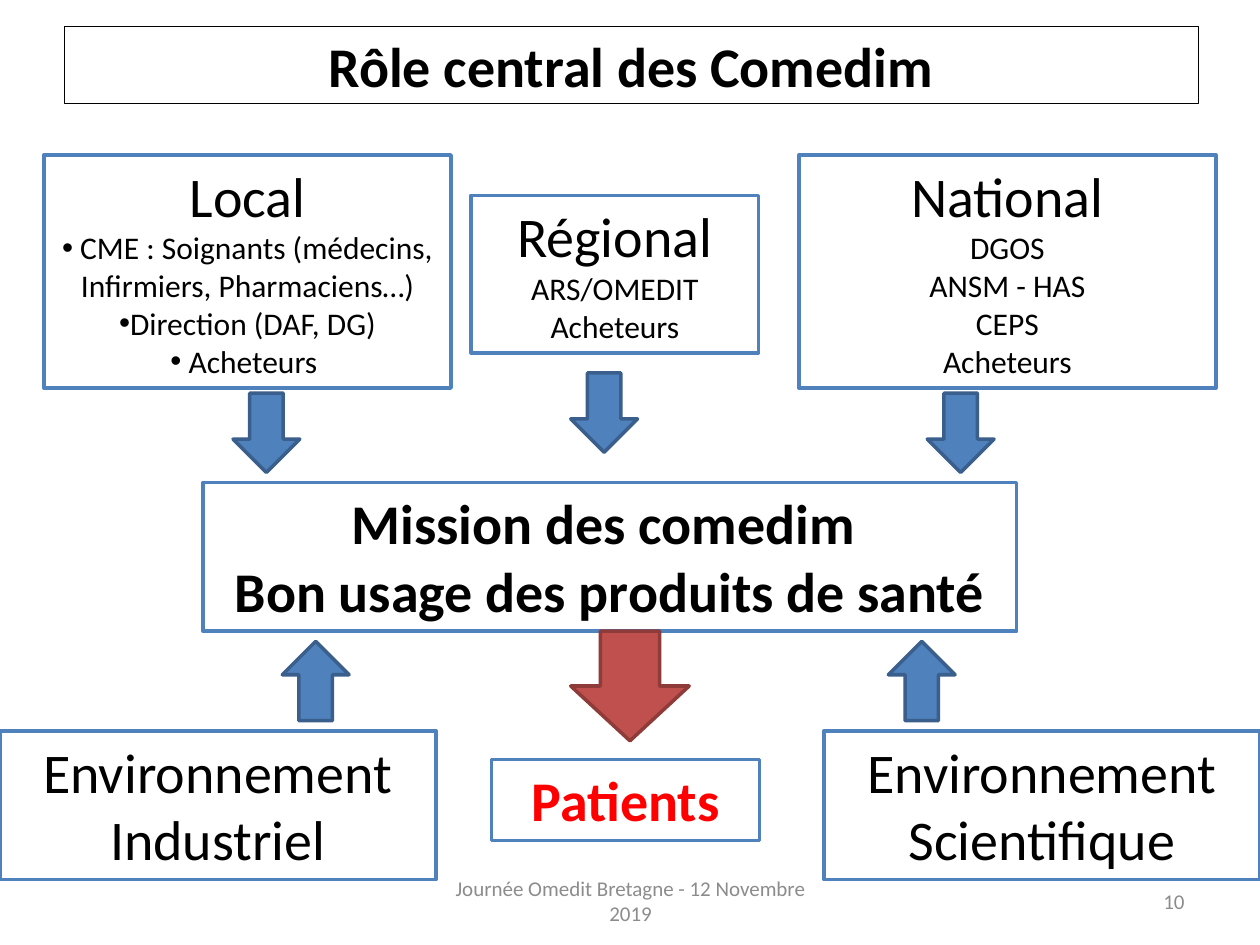
from lxml import etree
from pptx import Presentation
from pptx.dml import color
from pptx.enum import shapes, text
from pptx.oxml import ns
from pptx.util import Inches, Pt

BLUE, EDGE, RED = "4F81BD", "3A5F8C", "C0504D"
BIG = {"name": "Calibri", "size": Pt(32), "bold": False}
BOLD = {**BIG, "bold": True}
MID = {**BIG, "size": Pt(18)}
SMALL = {**BIG, "size": Pt(12)}
MIDDLE = {"vertical_anchor": text.MSO_ANCHOR.MIDDLE}


def rgb(code):
    return color.RGBColor.from_string(code)


def assign(item, opts):
    for name, value in opts.items():
        setattr(item, name, value)


def place(item, box):
    names = ("left", "top", "width", "height")
    assign(item, dict(zip(names, map(Inches, box))))


def paint(item, fill, line, width=2):
    if fill:
        item.fill.solid()
        item.fill.fore_color.rgb = rgb(fill)
    item.line.color.rgb = rgb(line)
    item.line.width = Pt(width)


def mark(para, bullet=None, left=0, first=0):
    props = para._p.get_or_add_pPr()
    props.set("marL", str(Inches(left)))
    props.set("indent", str(Inches(first)))
    if bullet:
        font = etree.SubElement(props, ns.qn("a:buFont"))
        font.set("typeface", "Arial")
        etree.SubElement(props, ns.qn("a:buChar")).set("char", bullet)
    else:
        etree.SubElement(props, ns.qn("a:buNone"))


def write(item, lines, ink="000000", align="CENTER", frame=None, **marks):
    body = item.text_frame
    assign(body, {"word_wrap": True, "auto_size": text.MSO_AUTO_SIZE.NONE})
    assign(body, frame or {})
    for i, (words, font, *bullet) in enumerate(lines):
        para = body.add_paragraph() if i else body.paragraphs[0]
        assign(para, {"alignment": text.PP_ALIGN[align], "space_before": Pt(0)})
        mark(para, *bullet, **marks)
        run = para.add_run()
        run.text = words
        assign(run.font, font)
        run.font.color.rgb = rgb(ink)


def label(slide, box, lines, **opts):
    item = slide.shapes.add_textbox(*map(Inches, box))
    write(item, lines, **opts)
    return item


def panel(slide, box, lines, **opts):
    grow = {"auto_size": text.MSO_AUTO_SIZE.SHAPE_TO_FIT_TEXT}
    paint(label(slide, box, lines, frame=grow, **opts), "FFFFFF", BLUE)


def arrow(slide, left, top, size=(0.53, 0.63), turn=0, fill=BLUE, line=EDGE):
    item = slide.shapes.add_shape(
        shapes.MSO_SHAPE.DOWN_ARROW, *map(Inches, (left, top, *size)))
    item.shadow.inherit = False
    item.rotation = turn
    paint(item, fill, line)


def main():
    deck = Presentation()
    assign(deck, {"slide_width": Inches(10), "slide_height": Inches(7.5)})
    slide = deck.slides.add_slide(deck.slide_layouts[1])

    title, body = slide.placeholders
    place(title, (0.51, 0.21, 9, 0.61))
    paint(title, None, "000000", 0.75)
    write(title, [("Rôle central des Comedim", BOLD)], frame=MIDDLE)

    place(body, (1.61, 3.83, 6.46, 1.18))
    paint(body, "FFFFFF", BLUE)
    write(body, [("Mission des comedim ", BOLD),
                 ("Bon usage des produits de santé", BOLD)],
          left=0.38, first=-0.38)

    panel(slide, (0.35, 1.23, 3.23, 1.85), [
        ("Local", BIG),
        (" CME : Soignants (médecins, Infirmiers, Pharmaciens…)", MID, "•"),
        ("Direction (DAF, DG)", MID, "•"),
        (" Acheteurs ", MID, "•")])
    panel(slide, (3.74, 1.55, 2.28, 1.25), [
        ("Régional", BIG), ("ARS/OMEDIT", MID), ("Acheteurs", MID)])
    panel(slide, (6.34, 1.23, 3.31, 1.85), [
        ("National", BIG), ("DGOS", MID), ("ANSM - HAS", MID),
        ("CEPS", MID), ("Acheteurs", MID)])
    for left, field in ((0, "Industriel"), (6.54, "Scientifique")):
        panel(slide, (left, 5.8, 3.46, 1.18),
              [("Environnement", BIG), (field, BIG)])
    panel(slide, (3.9, 6.03, 2.13, 0.64), [("Patients", BOLD)], ink="FF0000")

    for left, top in ((1.85, 3.12), (4.53, 2.96), (7.36, 3.12)):
        arrow(slide, left, top)
    for left in (2.24, 7.05):
        arrow(slide, left, 5.09, turn=180)
    arrow(slide, 4.53, 5.01, (0.94, 0.87), fill=RED, line="8E3B39")

    label(slide, (3.42, 6.95, 3.17, 0.4),
          [("Journée Omedit Bretagne - 12 Novembre 2019", SMALL)],
          ink="8C8C8C", frame=MIDDLE)
    label(slide, (7.17, 6.95, 2.33, 0.4), [("10", SMALL)],
          ink="8C8C8C", align="RIGHT", frame=MIDDLE)
    deck.save("out.pptx")


if __name__ == "__main__":
    main()
